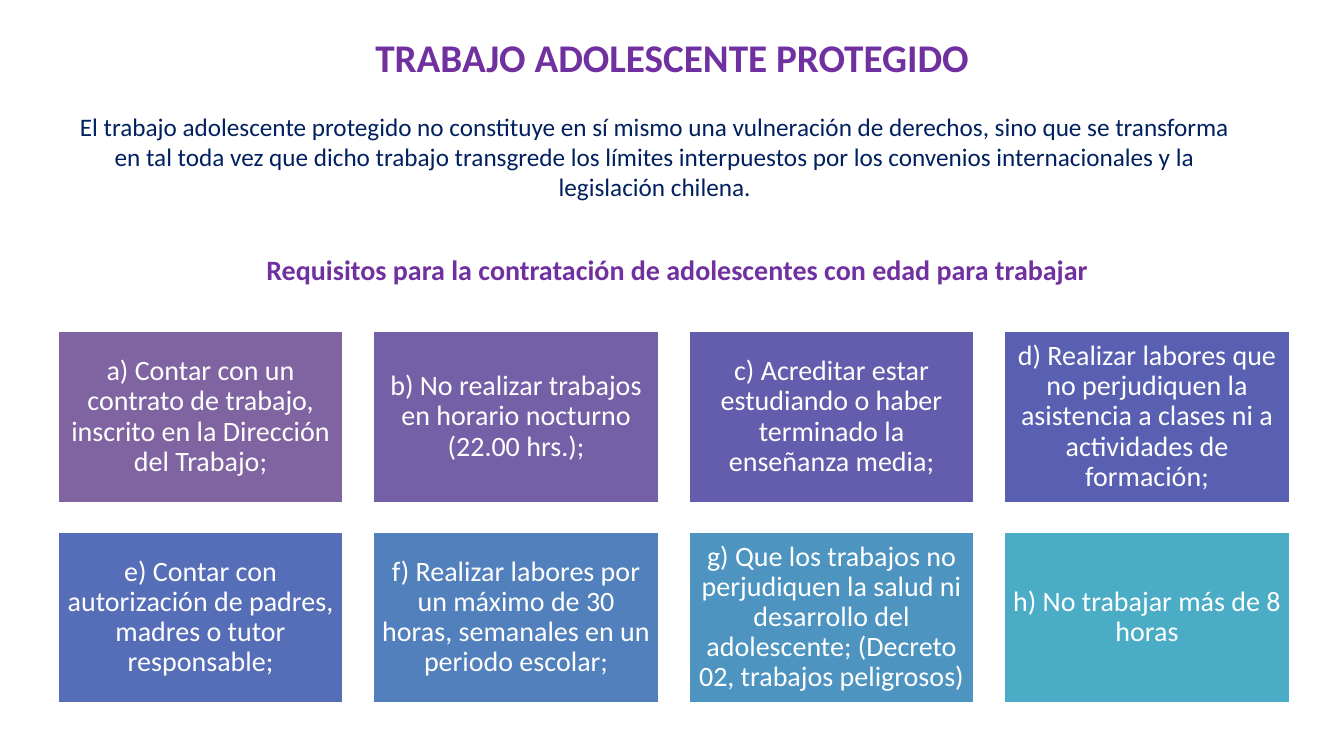
"""Build the slide on protected adolescent work and its hiring requirements."""
from dataclasses import dataclass

import pptx
import pptx.dml.color
import pptx.enum.shapes
import pptx.enum.text
import pptx.shapes.autoshape
import pptx.slide
import pptx.util

Pt = pptx.util.Pt
RGBColor = pptx.dml.color.RGBColor
MSO_ANCHOR = pptx.enum.text.MSO_ANCHOR
MSO_AUTO_SIZE = pptx.enum.text.MSO_AUTO_SIZE

FONT_NAME = "Calibri"
WHITE = RGBColor(0xFF, 0xFF, 0xFF)
PURPLE = RGBColor(0x70, 0x30, 0xA0)
NAVY = RGBColor(0x00, 0x20, 0x60)

SLIDE_WIDTH, SLIDE_HEIGHT = 960, 540
COLUMNS = 4
GRID_LEFT, GRID_TOP = 41.04, 236.16
CARD_WIDTH, CARD_HEIGHT = 204.48, 123.12
COLUMN_STEP, ROW_STEP = 225.36, 143.28


@dataclass(frozen=True)
class Box:
    left: float
    top: float
    width: float
    height: float


@dataclass(frozen=True)
class Requirement:
    text: str
    fill: RGBColor


@dataclass(frozen=True)
class Passage:
    text: str
    box: Box
    size: float
    color: RGBColor
    bold: bool = False


TITLE = Passage("TRABAJO ADOLESCENTE PROTEGIDO", Box(0, 20.16, SLIDE_WIDTH, 41.04), 28, PURPLE, True)
PASSAGES = (
    Passage(
        "El trabajo adolescente protegido no constituye en sí mismo una vulneración de derechos, "
        "sino que se transforma en tal toda vez que dicho trabajo transgrede los límites "
        "interpuestos por los convenios internacionales y la legislación chilena.",
        Box(41.04, 75.6, 853.2, 72.72), 18, NAVY,
    ),
    Passage(
        "Requisitos para la contratación de adolescentes con edad para trabajar",
        Box(87.84, 177.12, 792, 31.68), 20, PURPLE, True,
    ),
)
REQUIREMENTS = (
    Requirement("a) Contar con un contrato de trabajo, inscrito en la Dirección del Trabajo;",
                RGBColor(0x80, 0x64, 0xA2)),
    Requirement("b) No realizar trabajos en horario nocturno (22.00 hrs.);",
                RGBColor(0x74, 0x60, 0xA7)),
    Requirement("c) Acreditar estar estudiando o haber terminado la enseñanza media;",
                RGBColor(0x64, 0x5D, 0xAD)),
    Requirement("d) Realizar labores que no perjudiquen la asistencia a clases ni a actividades de formación;",
                RGBColor(0x59, 0x60, 0xB2)),
    Requirement("e) Contar con autorización de padres, madres o tutor responsable;",
                RGBColor(0x55, 0x6E, 0xB7)),
    Requirement("f) Realizar labores por un máximo de 30 horas, semanales en un periodo escolar;",
                RGBColor(0x52, 0x80, 0xBC)),
    Requirement("g) Que los trabajos no perjudiquen la salud ni desarrollo del adolescente; "
                "(Decreto 02, trabajos peligrosos)",
                RGBColor(0x4E, 0x94, 0xC1)),
    Requirement("h) No trabajar más de 8 horas", RGBColor(0x4B, 0xAC, 0xC6)),
)


def position(box: Box) -> tuple[int, int, int, int]:
    return Pt(box.left), Pt(box.top), Pt(box.width), Pt(box.height)


def write_text(
    shape: pptx.shapes.autoshape.Shape,
    text: str,
    *,
    size: float,
    color: RGBColor,
    bold: bool = False,
    anchor: MSO_ANCHOR = MSO_ANCHOR.TOP,
    auto_size: MSO_AUTO_SIZE = MSO_AUTO_SIZE.SHAPE_TO_FIT_TEXT,
    insets: tuple[float, float] = (7.2, 3.6),
    line_spacing: float = 1.0,
) -> None:
    frame = shape.text_frame
    frame.word_wrap = True
    frame.auto_size = auto_size
    frame.vertical_anchor = anchor
    frame.margin_left = frame.margin_right = Pt(insets[0])
    frame.margin_top = frame.margin_bottom = Pt(insets[1])
    paragraph = frame.paragraphs[0]
    paragraph.alignment = pptx.enum.text.PP_ALIGN.CENTER
    paragraph.line_spacing = line_spacing
    run = paragraph.add_run()
    run.text = text
    run.font.name = FONT_NAME
    run.font.size = Pt(size)
    run.font.bold = bold
    run.font.color.rgb = color


def write_passage(shape: pptx.shapes.autoshape.Shape, passage: Passage) -> None:
    write_text(shape, passage.text, size=passage.size, color=passage.color, bold=passage.bold)


def draw_title(slide: pptx.slide.Slide) -> None:
    title = slide.shapes.title
    title.left, title.top, title.width, title.height = position(TITLE.box)
    write_passage(title, TITLE)


def draw_card(slide: pptx.slide.Slide, requirement: Requirement, box: Box) -> None:
    card = slide.shapes.add_shape(pptx.enum.shapes.MSO_SHAPE.RECTANGLE, *position(box))
    card.shadow.inherit = False
    card.fill.solid()
    card.fill.fore_color.rgb = requirement.fill
    card.line.color.rgb = WHITE
    card.line.width = Pt(2)
    write_text(card, requirement.text, size=20, color=WHITE, anchor=MSO_ANCHOR.MIDDLE,
               auto_size=MSO_AUTO_SIZE.NONE, insets=(6, 6), line_spacing=0.9)


def main() -> None:
    presentation = pptx.Presentation()
    presentation.slide_width = Pt(SLIDE_WIDTH)
    presentation.slide_height = Pt(SLIDE_HEIGHT)
    slide = presentation.slides.add_slide(presentation.slide_layouts.get_by_name("Title Only"))
    draw_title(slide)
    for index, requirement in enumerate(REQUIREMENTS):
        row, column = divmod(index, COLUMNS)
        box = Box(GRID_LEFT + column * COLUMN_STEP, GRID_TOP + row * ROW_STEP, CARD_WIDTH, CARD_HEIGHT)
        draw_card(slide, requirement, box)
    for passage in PASSAGES:
        write_passage(slide.shapes.add_textbox(*position(passage.box)), passage)
    presentation.save("out.pptx")


if __name__ == "__main__":
    main()
